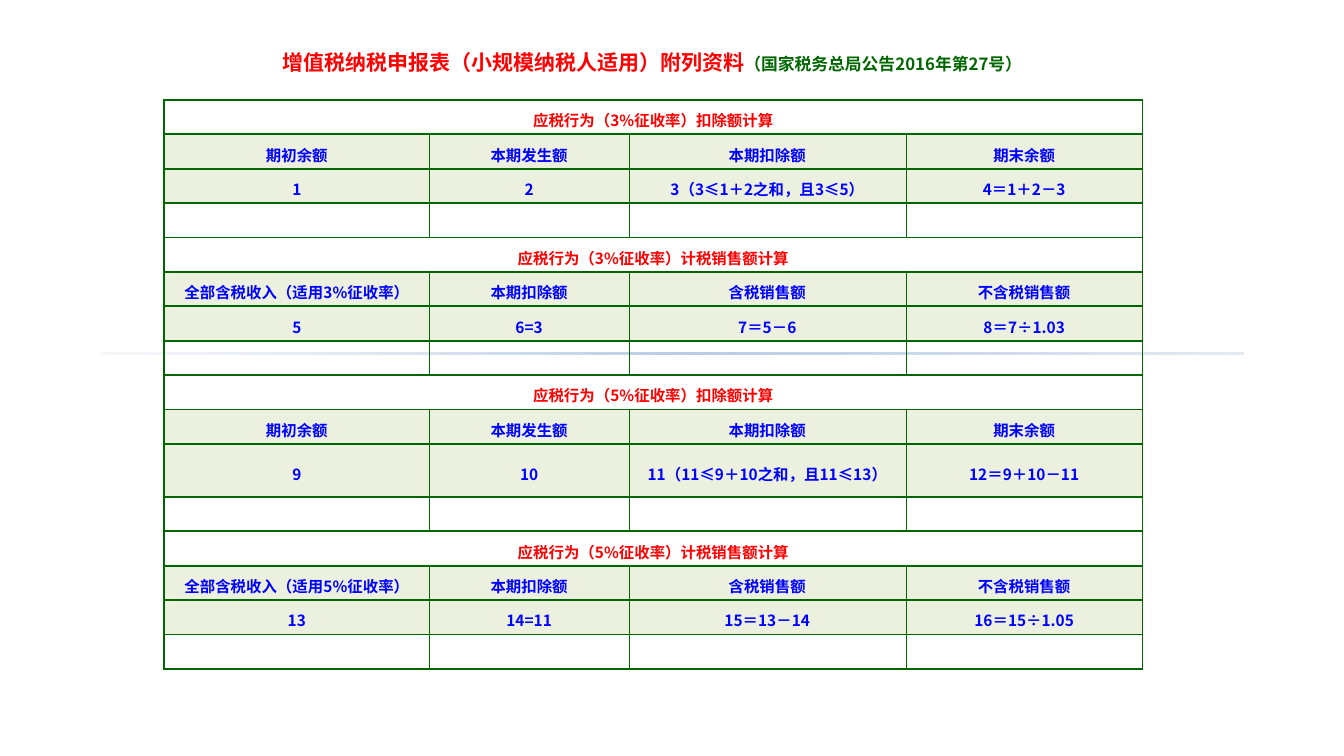
from lxml import etree
from pptx import Presentation
from pptx.dml.color import RGBColor
from pptx.enum.shapes import MSO_SHAPE
from pptx.enum.text import MSO_ANCHOR, PP_ALIGN
from pptx.oxml import parse_xml
from pptx.oxml.ns import nsdecls, qn
from pptx.util import Pt

RECTANGLE = MSO_SHAPE.RECTANGLE
MIDDLE = MSO_ANCHOR.MIDDLE
CENTER = PP_ALIGN.CENTER

FONT = "Noto Sans CJK SC"
COLORS = {
    "red": "FF0000",
    "blue": "0000FF",
    "green": "006600",
    "label": "EBF1DE",
    "pale_bar": "D0D8E8",
    "bar": "4F81BD",
}
TITLE = [
    ("增值税纳税申报表（小规模纳税人适用）附列资料", 15, "red"),
    ("（国家税务总局公告2016年第27号）", 12, "green"),
]
BALANCE_HEADERS = ["期初余额", "本期发生额", "本期扣除额", "期末余额"]
SALES_HEADERS = ["本期扣除额", "含税销售额", "不含税销售额"]
SECTIONS = [
    ("应税行为（3%征收率）扣除额计算", BALANCE_HEADERS,
     ["1", "2", "3（3≤1＋2之和，且3≤5）", "4＝1＋2－3"]),
    ("应税行为（3%征收率）计税销售额计算", ["全部含税收入（适用3%征收率）"] + SALES_HEADERS,
     ["5", "6=3", "7＝5－6", "8＝7÷1.03"]),
    ("应税行为（5%征收率）扣除额计算", BALANCE_HEADERS,
     ["9", "10", "11（11≤9＋10之和，且11≤13）", "12＝9＋10－11"]),
    ("应税行为（5%征收率）计税销售额计算", ["全部含税收入（适用5%征收率）"] + SALES_HEADERS,
     ["13", "14=11", "15＝13－14", "16＝15÷1.05"]),
]
COLUMN_WIDTHS = [189.7, 142.3, 198.1, 169.1]
ROW_HEIGHT = 24.6
WRAPPED_ROW, WRAPPED_HEIGHT = 10, 37.9
TABLE_LEFT, TABLE_TOP = 117.3, 71.3
CELL_SIZE = 11
THICK, THIN = 1.5, 0.25
CELL_FORMAT = {
    "margin_left": Pt(5.8),
    "margin_right": Pt(5.8),
    "margin_top": Pt(5),
    "margin_bottom": Pt(1),
    "vertical_anchor": MIDDLE,
}
BAR_STOPS = [(0, "pale_bar", 20), (50, "bar", 40), (100, "pale_bar", 50)]


def add_text(paragraph, text, size, color):
    paragraph.alignment = CENTER
    run = paragraph.add_run()
    run.text = text
    for name, value in {"size": Pt(size), "bold": True, "name": FONT}.items():
        setattr(run.font, name, value)
    run.font.color.rgb = RGBColor.from_string(COLORS[color])
    etree.SubElement(run._r.get_or_add_rPr(), qn("a:ea"), typeface=FONT)


def add_borders(cell, widths):
    properties = cell._tc.get_or_add_tcPr()
    for index, (side, width) in enumerate(widths.items()):
        properties.insert(index, parse_xml(
            f'<a:ln{side} {nsdecls("a")} w="{Pt(width)}"><a:solidFill>'
            f'<a:srgbClr val="{COLORS["green"]}"/></a:solidFill></a:ln{side}>'))


def add_bar(slide):
    bar = slide.shapes.add_shape(RECTANGLE, Pt(72), Pt(252), Pt(816.5), Pt(1.5))
    bar.shadow.inherit = False
    bar.line.fill.background()
    stops = "".join(
        f'<a:gs pos="{position * 1000}"><a:srgbClr val="{COLORS[color]}">'
        f'<a:alpha val="{alpha * 1000}"/></a:srgbClr></a:gs>'
        for position, color, alpha in BAR_STOPS)
    bar._element.spPr.find(qn("a:prstGeom")).addnext(parse_xml(
        f'<a:gradFill {nsdecls("a")}><a:gsLst>{stops}</a:gsLst><a:lin ang="0"/></a:gradFill>'))


def add_title(slide):
    frame = slide.shapes.add_textbox(Pt(168.5), Pt(31.7), Pt(595.4), Pt(25.2)).text_frame
    frame.word_wrap = True
    frame.vertical_anchor = MIDDLE
    for text, size, color in TITLE:
        add_text(frame.paragraphs[0], text, size, color)


def add_form(slide):
    rows = []
    for heading, headers, formulas in SECTIONS:
        rows += [[heading, "", "", ""], headers, formulas, [""] * 4]
    heights = [ROW_HEIGHT] * len(rows)
    heights[WRAPPED_ROW] = WRAPPED_HEIGHT
    table = slide.shapes.add_table(
        len(rows), len(COLUMN_WIDTHS), Pt(TABLE_LEFT), Pt(TABLE_TOP),
        Pt(sum(COLUMN_WIDTHS)), Pt(sum(heights))).table
    table.first_row = table.horz_banding = False
    for column, width in zip(table.columns, COLUMN_WIDTHS):
        column.width = Pt(width)
    last = len(COLUMN_WIDTHS) - 1
    for row_index, (texts, height) in enumerate(zip(rows, heights)):
        table.rows[row_index].height = Pt(height)
        kind = row_index % 4
        if kind == 0:
            table.cell(row_index, 0).merge(table.cell(row_index, last))
        for column_index, text in enumerate(texts):
            cell = table.cell(row_index, column_index)
            for name, value in CELL_FORMAT.items():
                setattr(cell, name, value)
            paragraph = cell.text_frame.paragraphs[0]
            if text:
                add_text(paragraph, text, CELL_SIZE, "blue" if kind else "red")
            else:
                etree.SubElement(paragraph._p, qn("a:endParaRPr"), sz=str(CELL_SIZE * 100))
            if kind in (1, 2):
                cell.fill.solid()
                cell.fill.fore_color.rgb = RGBColor.from_string(COLORS["label"])
            else:
                cell.fill.background()
            add_borders(cell, {
                "L": THICK if kind == 0 or column_index == 0 else THIN,
                "R": THICK if kind == 0 or column_index == last else THIN,
                "T": THICK,
                "B": THICK,
            })


def main():
    presentation = Presentation()
    presentation.slide_width = Pt(960.5)
    presentation.slide_height = Pt(540)
    slide = presentation.slides.add_slide(presentation.slide_layouts[6])
    add_bar(slide)
    add_title(slide)
    add_form(slide)
    presentation.save("out.pptx")


if __name__ == "__main__":
    main()
